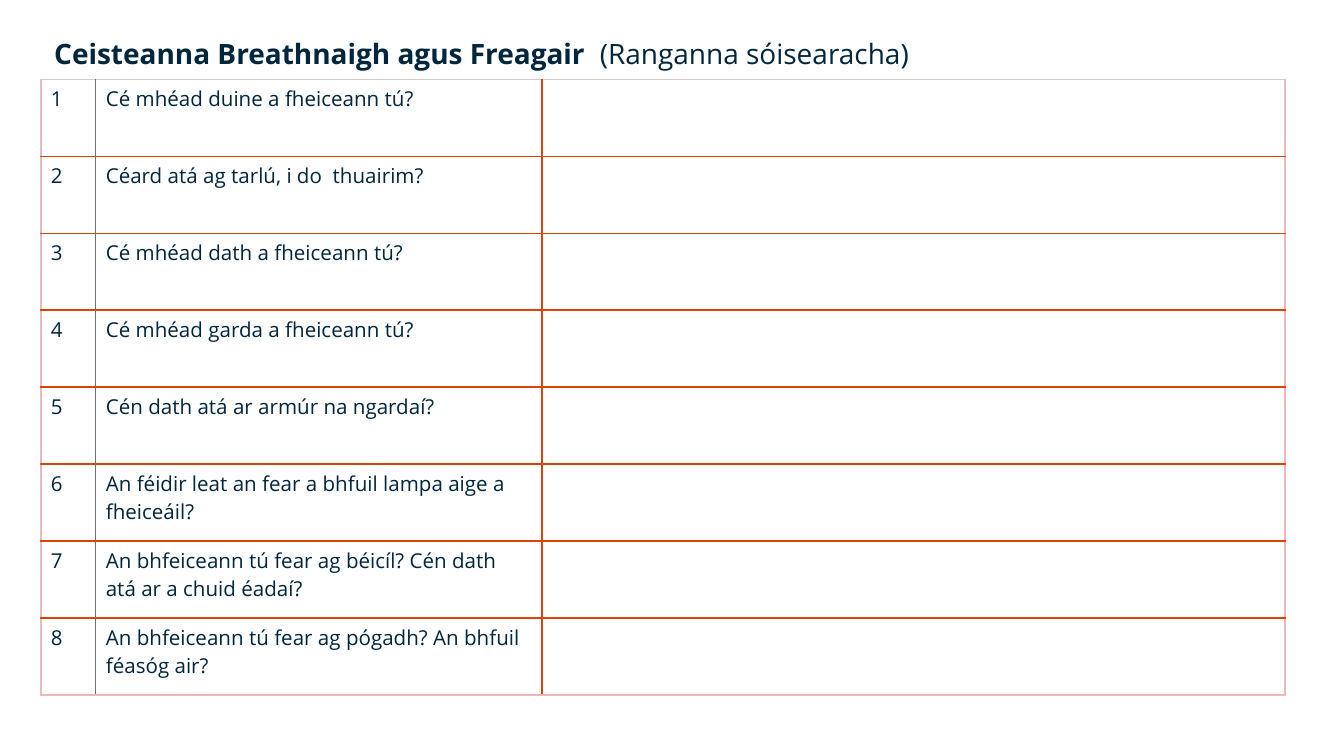
"""Builds a worksheet slide with eight numbered questions and blank answer cells."""
import pptx
import pptx.dml.color
import pptx.enum.text
import pptx.oxml
import pptx.oxml.ns
import pptx.util

Cm = pptx.util.Cm
RGBColor = pptx.dml.color.RGBColor

HEADING = "Ceisteanna Breathnaigh agus Freagair  "
CLASSES = "(Ranganna sóisearacha)"
QUESTIONS = [
    "Cé mhéad duine a fheiceann tú?",
    "Céard atá ag tarlú, i do  thuairim?",
    "Cé mhéad dath a fheiceann tú?",
    "Cé mhéad garda a fheiceann tú?",
    "Cén dath atá ar armúr na ngardaí?",
    "An féidir leat an fear a bhfuil lampa aige a fheiceáil?",
    "An bhfeiceann tú fear ag béicíl? Cén dath atá ar a chuid éadaí?",
    "An bhfeiceann tú fear ag pógadh? An bhfuil féasóg air?",
]

NAVY = RGBColor(0x00, 0x26, 0x3E)
ORANGE = RGBColor(0xDC, 0x44, 0x05)
PINK = RGBColor(0xEB, 0xB9, 0xB9)
SILVER = RGBColor(0xD9, 0xC8, 0xC8)
GREY = RGBColor(0x70, 0x70, 0x70)

FONT = "Open Sans"
COLUMN_WIDTHS = (Cm(1.04), Cm(8.43), Cm(14.05))
GRID_HEIGHT = Cm(11.64)
OUTER, INNER, NUMBER_EDGE, TOP_EDGE = (PINK, 1), (ORANGE, 1), (GREY, 0.5), (SILVER, 0.5)
COLUMN_EDGES = [OUTER, NUMBER_EDGE, INNER, OUTER]
ROW_EDGES = [TOP_EDGE] + [INNER] * (len(QUESTIONS) - 1) + [OUTER]


def add_text(paragraph, text, size=11, bold=False, color=NAVY):
    run = paragraph.add_run()
    run.text = text
    run.font.name = FONT
    run.font.size = pptx.util.Pt(size)
    run.font.bold = bold
    run.font.color.rgb = color


def set_borders(cell, **edges):
    properties = cell._tc.get_or_add_tcPr()
    for position, (side, (color, width)) in enumerate(edges.items()):
        border = pptx.oxml.parse_xml(
            f'<a:{side} {pptx.oxml.ns.nsdecls("a")} w="{pptx.util.Pt(width)}">'
            f'<a:solidFill><a:srgbClr val="{color}"/></a:solidFill></a:{side}>'
        )
        properties.insert(position, border)


def add_heading(slide):
    heading = slide.shapes.title
    heading.left, heading.top = Cm(0.77), Cm(0.56)
    heading.width, heading.height = Cm(22.78), Cm(0.89)
    frame = heading.text_frame
    frame.word_wrap = True
    frame.auto_size = pptx.enum.text.MSO_AUTO_SIZE.NONE
    frame.vertical_anchor = pptx.enum.text.MSO_ANCHOR.MIDDLE
    line = frame.paragraphs[0]
    line.alignment = pptx.enum.text.PP_ALIGN.LEFT
    add_text(line, HEADING, size=15, bold=True)
    add_text(line, CLASSES, size=15)


def add_questions(slide):
    grid = slide.shapes.add_table(
        len(QUESTIONS), len(COLUMN_WIDTHS), Cm(0.77), Cm(1.5), sum(COLUMN_WIDTHS), GRID_HEIGHT
    ).table
    grid.first_row = grid.horz_banding = False
    for column, width in zip(grid.columns, COLUMN_WIDTHS):
        column.width = width
    for r, question in enumerate(QUESTIONS):
        grid.rows[r].height = GRID_HEIGHT // len(QUESTIONS)
        for c, text in enumerate((str(r + 1), question, "")):
            cell = grid.cell(r, c)
            cell.fill.background()
            cell.margin_left = cell.margin_right = Cm(0.19)
            cell.margin_top = cell.margin_bottom = Cm(0.1)
            set_borders(cell, lnL=COLUMN_EDGES[c], lnR=COLUMN_EDGES[c + 1],
                        lnT=ROW_EDGES[r], lnB=ROW_EDGES[r + 1])
            if text:
                add_text(cell.text_frame.paragraphs[0], text)


def main():
    deck = pptx.Presentation()
    deck.slide_width, deck.slide_height = Cm(25.4), Cm(14.29)
    slide = deck.slides.add_slide(deck.slide_layouts[5])
    add_heading(slide)
    add_questions(slide)
    deck.save("out.pptx")


if __name__ == "__main__":
    main()
